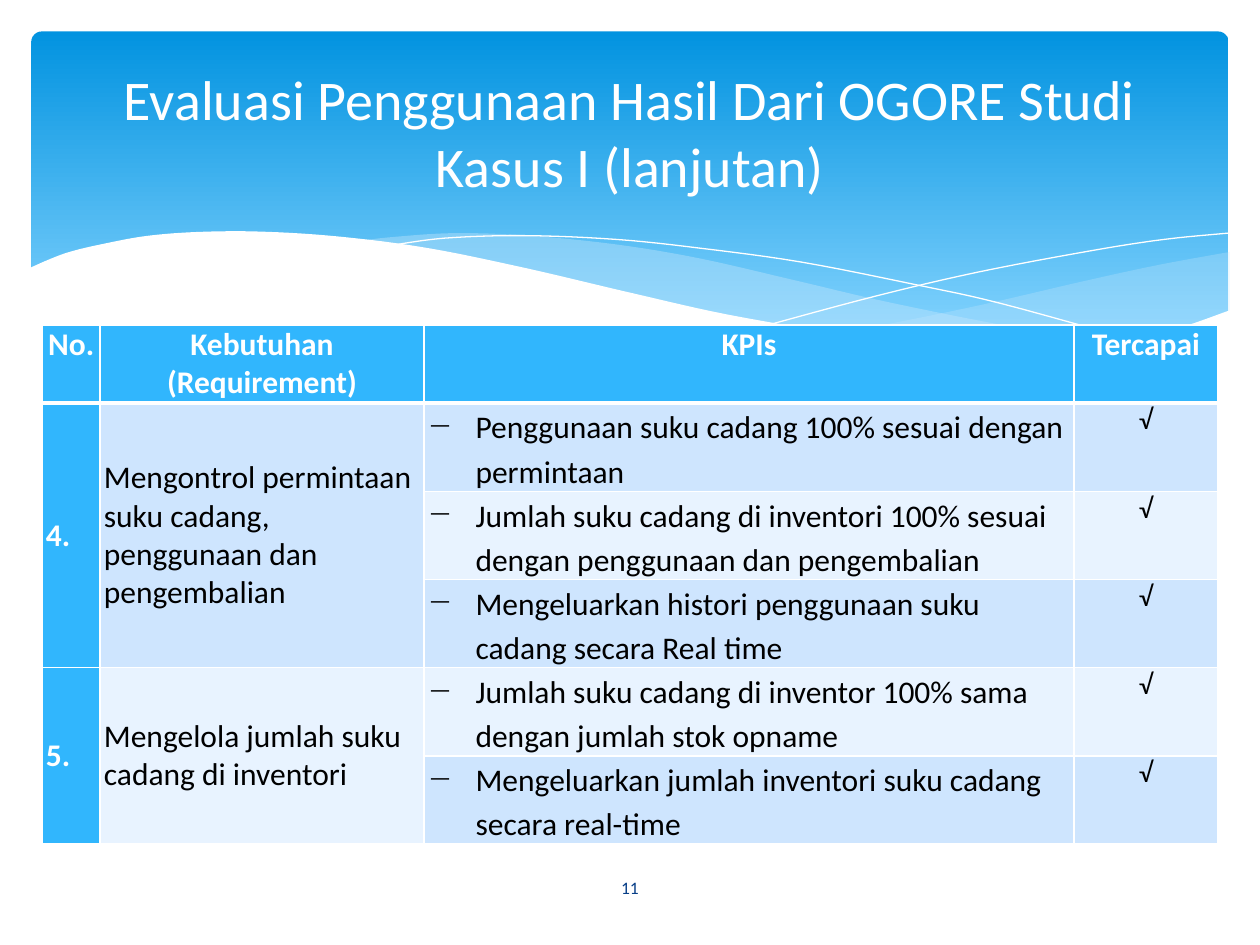
from collections import namedtuple

from lxml import etree
from pptx import Presentation
from pptx import util as u
from pptx.dml.color import RGBColor
from pptx.enum import shapes, text
from pptx.oxml import ns

WHITE = RGBColor(0xFF, 0xFF, 0xFF)
BLACK = RGBColor(0x00, 0x00, 0x00)
NAVY = RGBColor(0x07, 0x3E, 0x87)
SKY_TOP = RGBColor(0x02, 0x93, 0xE0)
SKY_LOW = RGBColor(0x83, 0xD3, 0xFE)
MIST = RGBColor(0xC6, 0xE7, 0xFC)
HEADER = RGBColor(0x31, 0xB6, 0xFD)
BANDS = [RGBColor(0xE8, 0xF3, 0xFF), RGBColor(0xCE, 0xE5, 0xFE)]

FONT = "Calibri"
COLUMNS, ROWS = 100, 75
UNIT = u.Inches(0.1)
Box = namedtuple("Box", "left top width height")

LEFT, CENTER = text.PP_ALIGN.LEFT, text.PP_ALIGN.CENTER
TOP, MIDDLE = text.MSO_ANCHOR.TOP, text.MSO_ANCHOR.MIDDLE

RIGHT_WAVE = [(97.6, 20), (92.1, 21), (86.1, 22.3), (77.9, 24.2), (70.6, 25.7), (66.1, 26.5)]
RIGHT_WAVE_BACK = [(66.1, 26.5), (71.9, 27.2), (79.2, 27.7), (85.4, 27.7), (90.5, 26.9),
                   (94.2, 25.9), (97.6, 24.7)]
MID_WAVE = [(89.3, 27.3), (80.7, 26), (70.6, 24), (62.9, 22.2), (55.5, 20.5), (48.9, 19.4),
            (42, 18.7), (36.1, 18.5), (31.3, 18.8), (28.6, 19.1)]
MID_WAVE_BACK = [(28.6, 19.1), (36.2, 20.3), (44.9, 22.2), (56.6, 24.8), (66.5, 26.6),
                 (74.8, 27.6), (81.8, 27.8), (89.3, 27.3)]
FALLING_LINE = [(30.9, 19.5), (35.3, 18.9), (41.6, 18.7), (48.9, 19), (55.6, 19.7), (63.6, 20.8),
                (72.7, 22.6), (79.5, 24.1), (90.7, 27.2)]
RISING_LINE = [(61.3, 25.7), (69.5, 23.5), (77.6, 21.6), (86.6, 19.9), (92.4, 19), (97.5, 18.5)]
FRONT_WAVE = [(97.7, 24.6), (93, 26.2), (87.5, 27.3), (80.9, 27.7), (74.4, 27.4), (66.8, 26.5),
              (57.9, 25), (50.3, 23.3), (41.8, 21.3), (34, 19.7), (27.1, 18.8), (21.1, 18.4),
              (16.1, 18.4), (11.9, 18.7), (8.5, 19.3), (5.2, 20.1), (2.3, 21.3)]
FRONT_BASE = [(2.3, 32.9), (97.7, 32.9)]

HEADINGS = ["No.", "Kebutuhan (Requirement)", "KPIs", "Tercapai"]
NEEDS = [
    ("4.", "Mengontrol permintaan suku cadang, penggunaan dan pengembalian", [
        "Penggunaan suku cadang 100% sesuai dengan permintaan",
        "Jumlah suku cadang di inventori 100% sesuai dengan penggunaan dan pengembalian",
        "Mengeluarkan histori penggunaan suku cadang secara Real time"]),
    ("5.", "Mengelola jumlah suku cadang di inventori", [
        "Jumlah suku cadang di inventor 100% sama dengan jumlah stok opname",
        "Mengeluarkan jumlah inventori suku cadang secara real-time"]),
]


def grid(*lengths):
    return [round(length * UNIT) for length in lengths]


def apply(target, **formats):
    for name, value in formats.items():
        setattr(target, name, value)


def write(para, words, size, color, bold=False, align=CENTER):
    para.alignment = align
    span = para.add_run()
    span.text = words
    apply(span.font, name=FONT, size=u.Pt(size), bold=bold)
    span.font.color.rgb = color


def smooth(knots, steps=6):
    ends = [knots[0], *knots, knots[-1]]
    curve = [knots[0]]
    for a, b, c, d in zip(ends, ends[1:], ends[2:], ends[3:]):
        for step in range(1, steps + 1):
            t = step / steps
            curve.append(tuple(
                q + t / 2 * (r - p + t * (2 * p - 5 * q + 4 * r - s + t * (3 * (q - r) + s - p)))
                for p, q, r, s in zip(a, b, c, d)))
    return curve


def add_wave(page, box, points, fill=None, alpha=100):
    places = [grid(box.left + x, box.top + y) for x, y in points]
    builder = page.shapes.build_freeform(*places[0], scale=1.0)
    builder.add_line_segments(places[1:], close=fill is not None)
    wave = builder.convert_to_shape()
    wave.shadow.inherit = False
    if fill is None:
        wave.fill.background()
        wave.line.color.rgb = WHITE
        wave.line.width = 0
        return
    wave.line.fill.background()
    wave.fill.solid()
    wave.fill.fore_color.rgb = fill
    if alpha < 100:
        tint = wave.fill._xPr.find(".//" + ns.qn("a:srgbClr"))
        etree.SubElement(tint, ns.qn("a:alpha"), val=str(alpha * 1000))


def add_banner(page, box):
    sky = page.shapes.add_shape(shapes.MSO_SHAPE.ROUNDED_RECTANGLE,
                                *grid(box.left + 2.5, box.top + 2.5, box.width - 5, 27))
    sky.adjustments[0] = 0.03
    sky.shadow.inherit = False
    sky.line.fill.background()
    sky.fill.gradient()
    sky.fill.gradient_angle = 270
    for stop, color, position in zip(sky.fill.gradient_stops, (SKY_TOP, SKY_LOW), (0, 0.9)):
        stop.color.rgb = color
        stop.position = position
    add_wave(page, box, smooth(RIGHT_WAVE) + smooth(RIGHT_WAVE_BACK), MIST, 29)
    add_wave(page, box, smooth(MID_WAVE) + smooth(MID_WAVE_BACK), MIST, 40)
    add_wave(page, box, smooth(FALLING_LINE))
    add_wave(page, box, smooth(RISING_LINE))
    add_wave(page, box, smooth(FRONT_WAVE) + FRONT_BASE, WHITE)


def add_label(page, box, words, size, color):
    frame = page.shapes.add_textbox(*grid(*box)).text_frame
    apply(frame, word_wrap=True, vertical_anchor=MIDDLE)
    write(frame.paragraphs[0], words, size, color)


def add_borders(cell, bottom):
    properties = cell._tc.get_or_add_tcPr()
    for side, width in (("L", 1), ("R", 1), ("T", 1), ("B", bottom)):
        edge = etree.SubElement(properties, ns.qn("a:ln" + side), w=str(u.Pt(width)))
        paint = etree.SubElement(edge, ns.qn("a:solidFill"))
        etree.SubElement(paint, ns.qn("a:srgbClr"), val=str(WHITE))


def style_cell(cell, fill, anchor=TOP, bottom=1):
    add_borders(cell, bottom)
    cell.fill.solid()
    cell.fill.fore_color.rgb = fill
    side = u.Inches(0.03)
    apply(cell, margin_left=side, margin_right=side, margin_top=0, margin_bottom=0,
          vertical_anchor=anchor)
    return cell.text_frame.paragraphs[0]


def add_dash(para):
    para.line_spacing = 1.15
    properties = para._p.get_or_add_pPr()
    indent = u.Inches(0.38)
    properties.set("marL", str(indent))
    properties.set("indent", str(-indent))
    etree.SubElement(properties, ns.qn("a:buChar"), char="−")


def add_needs_table(page, box):
    count = sum(len(kpis) for _, _, kpis in NEEDS)
    table = page.shapes.add_table(count + 1, len(HEADINGS), *grid(*box)).table
    table.first_col = True
    for column, width in zip(table.columns, grid(4.6, 25.7, 51.6, 11.4)):
        column.width = width
    for row, height in zip(table.rows, grid(6.2, *[7] * count)):
        row.height = height
    for column, heading in enumerate(HEADINGS):
        write(style_cell(table.cell(0, column), HEADER, bottom=3), heading, 18, WHITE, True)

    first = 1
    for number, need, kpis in NEEDS:
        last = first + len(kpis) - 1
        for row, kpi in enumerate(kpis, first):
            band = BANDS[row % 2]
            paras = [style_cell(table.cell(row, column), fill, anchor)
                     for column, (fill, anchor) in enumerate(
                         [(HEADER, MIDDLE), (BANDS[first % 2], MIDDLE), (band, TOP), (band, TOP)])]
            if row == first:
                write(paras[0], number, 18, WHITE, True, LEFT)
                write(paras[1], need, 18, BLACK, align=LEFT)
            add_dash(paras[2])
            write(paras[2], kpi, 18, BLACK, align=LEFT)
            write(paras[3], "√", 16, BLACK)
        for column in (0, 1):
            table.cell(first, column).merge(table.cell(last, column))
        first = last + 1


def main():
    deck = Presentation()
    apply(deck, slide_width=COLUMNS * UNIT, slide_height=ROWS * UNIT)
    page = deck.slides.add_slide(deck.slide_layouts[6])
    add_banner(page, Box(0, 0, COLUMNS, 33))
    add_label(page, Box(43.65, 68.4, 12.7, 4), "11", 10, NAVY)
    add_label(page, Box(5, 6.7, 90, 7.5),
              "Evaluasi Penggunaan Hasil Dari OGORE Studi Kasus I (lanjutan)", 32, WHITE)
    add_needs_table(page, Box(3.35, 25.8, 93.3, 41.2))
    deck.save("out.pptx")


if __name__ == "__main__":
    main()
